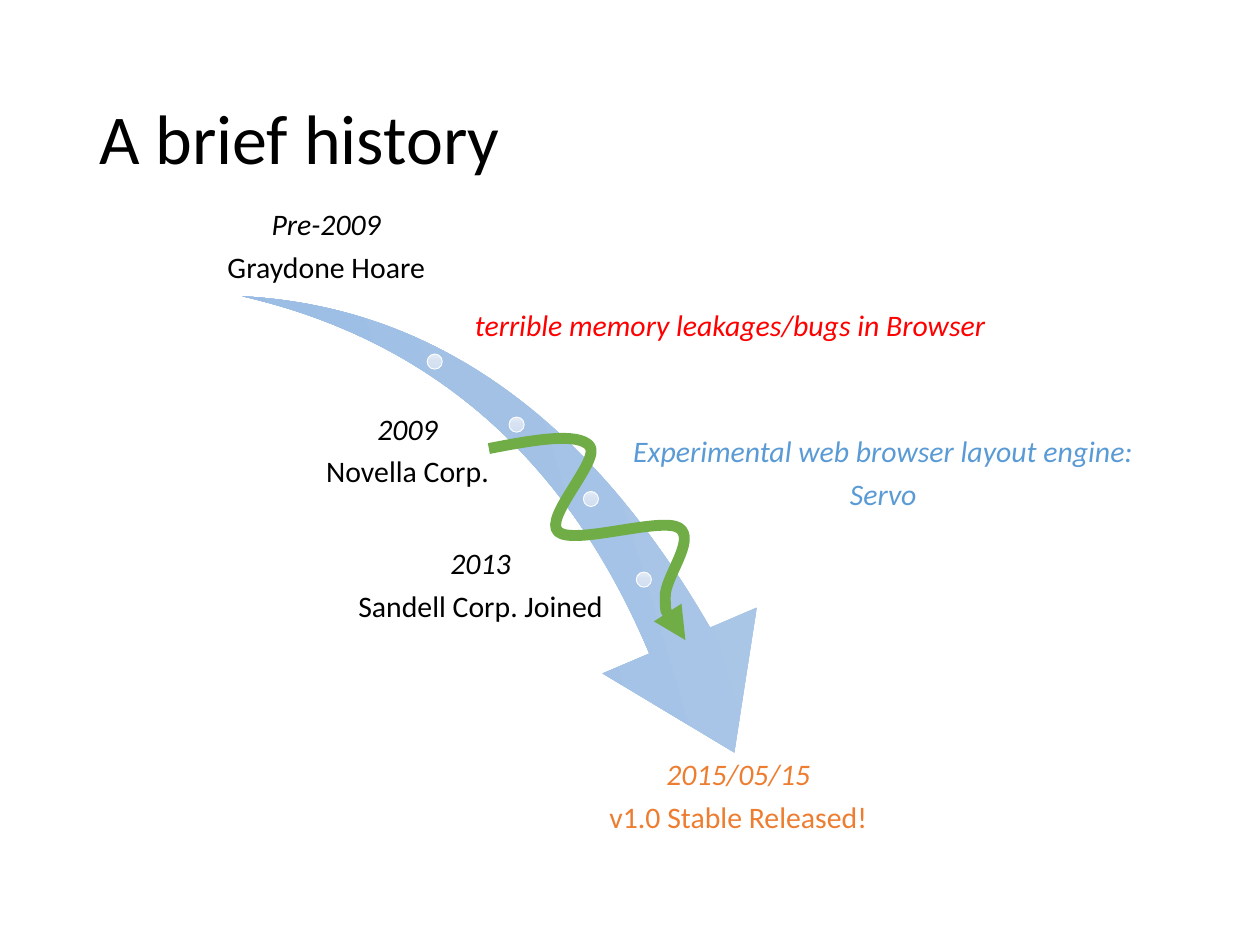
from copy import deepcopy

from lxml import etree
from pptx import Presentation
from pptx.dml.color import RGBColor
from pptx.enum.shapes import MSO_SHAPE as SHAPE
from pptx.enum.text import MSO_ANCHOR as ANCHOR, PP_ALIGN as ALIGN
from pptx.oxml.ns import qn
from pptx.util import Inches, Pt

BLACK = RGBColor(0x00, 0x00, 0x00)
WHITE = RGBColor(0xFF, 0xFF, 0xFF)
RED = RGBColor(0xFF, 0x00, 0x00)
BLUE = RGBColor(0x5B, 0x9B, 0xD5)
ORANGE = RGBColor(0xED, 0x7D, 0x31)
GREEN = RGBColor(0x70, 0xAD, 0x47)
ARROW_BLUES = [RGBColor.from_string(c) for c in ("B1CBE9", "A3C1E5", "93B9E4")]
DOT_BLUES = [RGBColor.from_string(c) for c in ("E3EBF6", "D6E2F2", "D0DEF1")]

# Box (left, top, width, height), lines as (text, italic), format
LABELS = [
    ((1.51, 1.43, 2.16, 0.85), [("Pre-2009", True), ("Graydone Hoare", False)],
     dict(anchor=ANCHOR.BOTTOM)),
    ((3.75, 2.17, 5.43, 0.85), [("terrible memory leakages/bugs in Browser", True)],
     dict(color=RED, align=ALIGN.LEFT)),
    ((2.55, 3.16, 1.37, 0.85), [("2009", True), ("Novella Corp.", False)], {}),
    ((4.93, 3.34, 4.16, 0.85),
     [("Experimental web browser layout engine:", True), ("Servo", True)],
     dict(color=BLUE)),
    ((2.73, 4.23, 2.17, 0.85), [("2013", True), ("Sandell Corp. Joined", False)], {}),
    ((4.4, 6.01, 2.92, 0.72), [("2015/05/15", True), ("v1.0 Stable Released!", False)],
     dict(color=ORANGE, anchor=ANCHOR.TOP)),
]
DOT_SIZE = 0.12
DOTS = [(3.39, 2.81), (4.04, 3.31), (4.63, 3.9), (5.05, 4.54)]

# Start point, then two control points and an end point for each bend
DETOUR_START = (3.88, 3.56)
DETOUR_BENDS = [
    (4.24, 3.49), (4.59, 3.43), (4.68, 3.54),
    (4.77, 3.65), (4.31, 4.11), (4.43, 4.22),
    (4.55, 4.33), (5.25, 4.1), (5.39, 4.19),
    (5.53, 4.28), (5.27, 4.59), (5.28, 4.74),
    (5.28, 4.89), (5.36, 4.98), (5.44, 5.08),
]


def add_text(page, place, lines, size=17, color=BLACK, align=ALIGN.CENTER,
             anchor=ANCHOR.MIDDLE, inset=0.02, after=6):
    box = page.shapes.add_textbox(*map(Inches, place))
    frame = box.text_frame
    frame.word_wrap = True
    frame.vertical_anchor = anchor
    frame.margin_left = frame.margin_right = Inches(inset)
    frame.margin_top = frame.margin_bottom = Inches(inset)
    for index, (text, italic) in enumerate(lines):
        para = frame.add_paragraph() if index else frame.paragraphs[0]
        para.alignment = align
        para.line_spacing = 0.9
        para.space_after = Pt(after)
        span = para.add_run()
        span.text = text
        span.font.name = "Calibri"
        span.font.size = Pt(size)
        span.font.italic = italic
        span.font.color.rgb = color


def add_gradient_shape(page, kind, place, colors):
    """Add a preset shape shaded from top to bottom through three colours."""
    shape = page.shapes.add_shape(kind, *map(Inches, place))
    shape.shadow.inherit = False
    fill = shape.fill
    fill.gradient()
    fill.gradient_angle = 270
    stop_list = next(shape._element.iter(qn("a:gsLst")))
    stop_list.append(deepcopy(stop_list[-1]))
    for stop, position, color in zip(fill.gradient_stops, (0, 0.5, 1), colors):
        stop.position = position
        stop.color.rgb = color
    return shape


def add_curved_arrow(page, start, bends):
    """Draw an open outline, then turn each three segments into one Bezier."""
    builder = page.shapes.build_freeform(*map(Inches, start))
    builder.add_line_segments(
        [(Inches(x), Inches(y)) for x, y in bends], close=False)
    curve = builder.convert_to_shape()
    curve.shadow.inherit = False
    curve.fill.background()
    curve.line.color.rgb = GREEN
    curve.line.width = Pt(6.25)
    outline = next(curve._element.iter(qn("a:path")))
    segments = outline.findall(qn("a:lnTo"))
    for first in range(0, len(segments), 3):
        bezier = etree.SubElement(outline, qn("a:cubicBezTo"))
        for segment in segments[first:first + 3]:
            bezier.append(segment[0])
            outline.remove(segment)
    line = curve._element.spPr.find(qn("a:ln"))
    etree.SubElement(line, qn("a:tailEnd"), type="triangle")


def main():
    deck = Presentation()
    deck.slide_width, deck.slide_height = Inches(10), Inches(7.5)
    page = deck.slides.add_slide(deck.slide_layouts[6])

    add_text(page, (0.69, 0.4, 8.62, 1.45), [("A brief history", False)],
             size=40, align=ALIGN.LEFT, inset=0.1, after=0)

    arrow = add_gradient_shape(page, SHAPE.SWOOSH_ARROW,
                               (1.82, 2.49, 4.59, 3.2), ARROW_BLUES)
    arrow.rotation = 73.3
    arrow.adjustments[0] = 0.163
    arrow.adjustments[1] = 0.314
    arrow.line.fill.background()

    for left, top in DOTS:
        dot = add_gradient_shape(page, SHAPE.OVAL,
                                 (left, top, DOT_SIZE, DOT_SIZE), DOT_BLUES)
        dot.line.color.rgb = WHITE
        dot.line.width = Pt(0.5)

    for place, lines, style in LABELS:
        add_text(page, place, lines, **style)

    add_curved_arrow(page, DETOUR_START, DETOUR_BENDS)
    deck.save("out.pptx")


if __name__ == "__main__":
    main()
